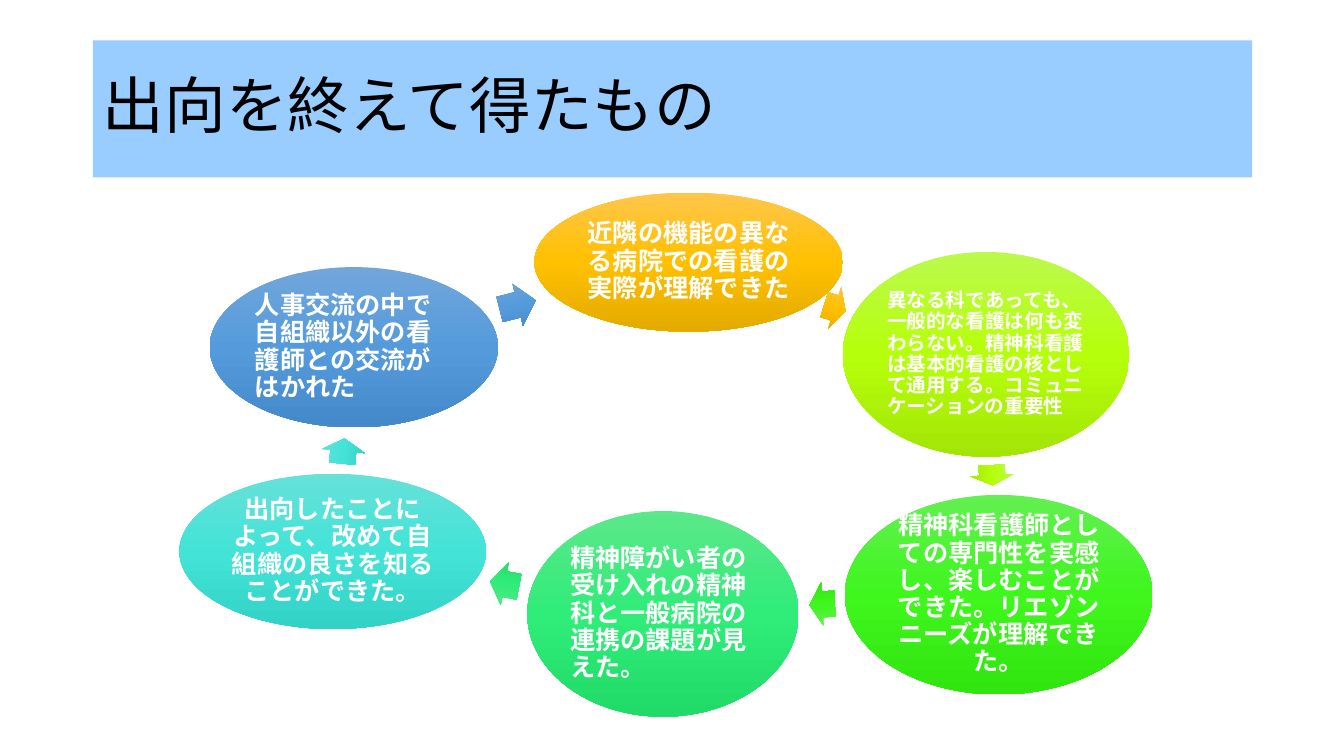
from copy import deepcopy
from pptx import Presentation
from pptx.dml.color import RGBColor
from pptx.enum.shapes import MSO_SHAPE as Shape
from pptx.enum.text import MSO_ANCHOR as Anchor, MSO_AUTO_SIZE as Fit, PP_ALIGN as Align
from pptx.oxml.ns import qn
from pptx.util import Inches, Pt

FONT = "Noto Sans CJK JP"
HUES = {
    "bar": "99CCFF", "ink": "000000", "text": "FFFFFF",
    "gold": ("FFC64B", "FFC000", "E3AB00"),
    "lime": ("BBF94D", "B6FF0A", "A3E506"),
    "green": ("62F052", "3FF61D", "31E50F"),
    "mint": ("5BE88A", "30EC79", "21DB69"),
    "aqua": ("66E1D8", "43E3D8", "33D2C7"),
    "blue": ("71A6DB", "559BDB", "448ACA"),
}
LEFT, MID = Align.LEFT, Align.CENTER
STEPS = [
    ("gold", (3.52, 0, 3.06, 1.38), 18, MID, (6.39, 0.93, 0.22), 17.3,
     "近隣の機能の異なる病院での看護の実際が理解できた"),
    ("lime", (6.58, 0.59, 2.84, 2.03), 14, LEFT, (7.96, 2.59, 0.2), 87,
     "異なる科であっても、一般的な看護は何も変わらない。精神科看護は基本的看護の核として通用する。"
     "コミュニケーションの重要性"),
    ("green", (6.6, 3, 3.05, 1.98), 18, MID, (6.25, 3.87, 0.25), 176.8,
     "精神科看護師としての専門性を実感し、楽しむことができた。リエゾンニーズが理解できた。"),
    ("mint", (3.45, 3.16, 2.69, 2.04), 18, LEFT, (3.08, 3.67, 0.29), 190.6,
     "精神障がい者の受け入れの精神科と一般病院の連携の課題が見えた。"),
    ("aqua", (0, 2.79, 3.04, 1.54), 18, MID, (1.5, 2.35, 0.25), 275.6,
     "出向したことによって、改めて自組織の良さを知ることができた。"),
    ("blue", (0.3, 0.74, 2.86, 1.59), 18, LEFT, (3.17, 0.9, 0.37), 345.9,
     "人事交流の中で自組織以外の看護師との交流がはかれた"),
]


def write(frame, text, size, hue, align, bold):
    """Write one paragraph, centred vertically, into a text frame."""
    frame.word_wrap = True
    frame.auto_size = Fit.NONE
    frame.vertical_anchor = Anchor.MIDDLE
    para = frame.paragraphs[0]
    para.alignment = align
    para.line_spacing = 0.9
    run = para.add_run()
    run.text = text
    font = run.font
    font.name, font.size, font.bold = FONT, Pt(size), bold
    font.color.rgb = RGBColor.from_string(HUES[hue])
    east = run._r.get_or_add_rPr().makeelement(qn("a:ea"), {"typeface": FONT})
    font._element.find(qn("a:latin")).addnext(east)


def blend(slide, kind, box, hue):
    """Add a borderless shape with a downward three-stop gradient."""
    shape = slide.shapes.add_shape(kind, *map(Inches, box))
    shape.shadow.inherit = False
    shape.line.fill.background()
    fill = shape.fill
    fill.gradient()
    fill.gradient_angle = 270
    stops = shape._element.spPr.find(qn("a:gradFill")).find(qn("a:gsLst"))
    stops.append(deepcopy(stops[0]))
    for stop, spot, tone in zip(fill.gradient_stops, (0, 0.5, 1), HUES[hue]):
        stop.position = spot
        stop.color.rgb = RGBColor.from_string(tone)
    return shape


def head(slide, box, text):
    """Place the title bar in its box."""
    title = slide.shapes.title
    title.left, title.top, title.width, title.height = map(Inches, box)
    title.fill.solid()
    title.fill.fore_color.rgb = RGBColor.from_string(HUES["bar"])
    write(title.text_frame, text, 44, "ink", LEFT, False)


def ring(slide, left, top):
    """Place the cycle of ovals and arrows from its top-left corner."""
    for hue, (x, y, wide, high), size, align, (ax, ay, span), turn, text in STEPS:
        oval = blend(slide, Shape.OVAL, (left + x, top + y, wide, high), hue)
        frame = oval.text_frame
        pad = Inches(size / 600)
        frame.margin_left = frame.margin_right = pad
        frame.margin_top = frame.margin_bottom = pad
        write(frame, text, size, "text", align, True)
        arrow = blend(slide, Shape.RIGHT_ARROW, (left + ax, top + ay, span, 0.43), hue)
        arrow.adjustments[0] = 0.6
        arrow.adjustments[1] = 0.5
        arrow.rotation = turn


def main():
    """Build and save the slide."""
    deck = Presentation()
    deck.slide_width, deck.slide_height = Inches(13.33), Inches(7.5)
    slide = deck.slides.add_slide(deck.slide_layouts[5])
    head(slide, (0.92, 0.4, 11.5, 1.36), "出向を終えて得たもの")
    ring(slide, 1.78, 1.91)
    deck.save("out.pptx")


if __name__ == "__main__":
    main()
